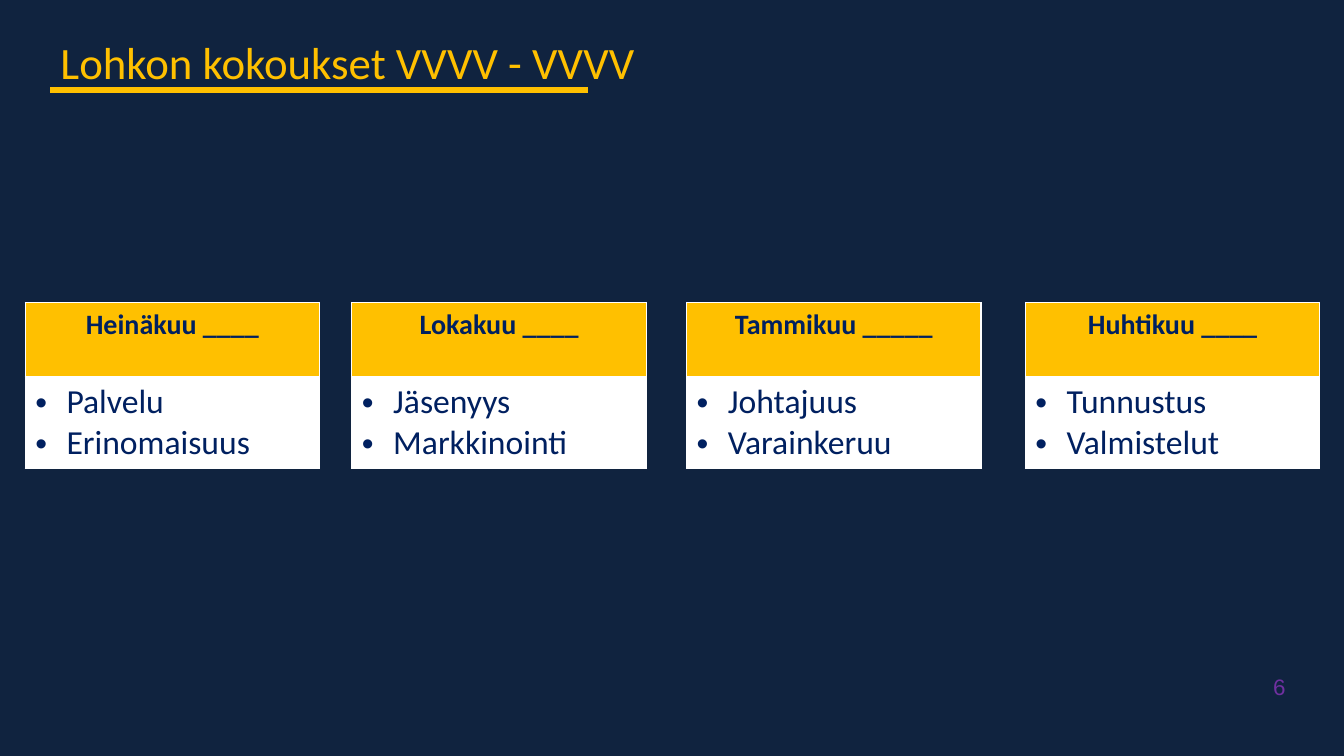
"""Builds the slide listing the four meetings of the section year."""
from dataclasses import dataclass

from lxml.etree import SubElement
from pptx import Presentation
from pptx.dml.color import RGBColor as RGB
from pptx.enum.shapes import MSO_CONNECTOR as CONN
from pptx.enum.text import MSO_ANCHOR as ANCHOR, MSO_AUTO_SIZE as AUTO, PP_ALIGN as ALIGN
from pptx.oxml import parse_xml
from pptx.oxml.ns import nsdecls, qn
from pptx.util import Inches, Pt


@dataclass(frozen=True)
class Theme:
    background: str = "10233F"
    gold: str = "FFC000"
    navy: str = "002060"
    white: str = "FFFFFF"
    purple: str = "7030A0"
    font: str = "Calibri"
    number_font: str = "Arial"
    title: int = 32
    header: int = 20
    body: int = 24
    number: int = 16
    rule: float = 4.5
    border: int = 1


class SlideBuilder:
    def __init__(self, prs, theme):
        self.theme = theme
        self.slide = prs.slides.add_slide(prs.slide_layouts[5])
        fill = self.slide.background.fill
        fill.solid()
        fill.fore_color.rgb = RGB.from_string(theme.background)

    def run(self, p, text, size, color, font=None, bold=False):
        r = p.add_run()
        r.text = text
        r.font.size = Pt(size)
        r.font.name = font or self.theme.font
        r.font.bold = bold
        r.font.color.rgb = RGB.from_string(color)

    def title(self, text, left, top, width, height):
        sp = self.slide.shapes.title
        sp.left, sp.top, sp.width, sp.height = map(Inches, (left, top, width, height))
        tf = sp.text_frame
        tf.word_wrap = True
        tf.auto_size = AUTO.NONE
        tf.vertical_anchor = ANCHOR.TOP
        p = tf.paragraphs[0]
        p.alignment = ALIGN.LEFT
        self.run(p, text, self.theme.title, self.theme.gold)

    def rule(self, x1, x2, y):
        line = self.slide.shapes.add_connector(
            CONN.STRAIGHT, Inches(x1), Inches(y), Inches(x2), Inches(y))
        line.line.color.rgb = RGB.from_string(self.theme.gold)
        line.line.width = Pt(self.theme.rule)
        SubElement(line._element.spPr, qn("a:effectLst"))

    def page_number(self, text, left, top, width, height):
        sp = self.slide.shapes.add_textbox(*map(Inches, (left, top, width, height)))
        tf = sp.text_frame
        tf.word_wrap = True
        tf.vertical_anchor = ANCHOR.MIDDLE
        tf.margin_left = tf.margin_right = 0
        p = tf.paragraphs[0]
        p.alignment = ALIGN.RIGHT
        self.run(p, text, self.theme.number, self.theme.purple, self.theme.number_font)

    def style_cell(self, cell, color):
        cell.fill.solid()
        cell.fill.fore_color.rgb = RGB.from_string(color)
        tc_pr = cell._tc.get_or_add_tcPr()
        for i, side in enumerate("LRTB"):
            tc_pr.insert(i, parse_xml(
                f'<a:ln{side} {nsdecls("a")} w="{Pt(self.theme.border)}"><a:solidFill>'
                f'<a:srgbClr val="{self.theme.white}"/></a:solidFill></a:ln{side}>'))

    def bullet(self, p, indent):
        p_pr = p._p.get_or_add_pPr()
        p_pr.set("marL", str(Inches(indent)))
        p_pr.set("indent", str(-Inches(indent)))
        SubElement(p_pr, qn("a:buFont")).set("typeface", "Arial")
        SubElement(p_pr, qn("a:buChar")).set("char", "•")

    def meeting(self, month, topics, left, top, width, heights):
        theme = self.theme
        frame = self.slide.shapes.add_table(
            2, 1, *map(Inches, (left, top, width, sum(heights))))
        table = frame.table
        for row, height in zip(table.rows, heights):
            row.height = Inches(height)
        header, body = table.cell(0, 0), table.cell(1, 0)
        self.style_cell(header, theme.gold)
        self.style_cell(body, theme.white)
        p = header.text_frame.paragraphs[0]
        p.alignment = ALIGN.CENTER
        self.run(p, month, theme.header, theme.navy, bold=True)
        tf = body.text_frame
        for i, topic in enumerate(topics):
            p = tf.add_paragraph() if i else tf.paragraphs[0]
            self.bullet(p, 0.31)
            self.run(p, topic, theme.body, theme.navy)


MEETINGS = [
    (0.25, "Heinäkuu ____", ("Palvelu", "Erinomaisuus")),
    (3.49, "Lokakuu ____", ("Jäsenyys", "Markkinointi")),
    (6.81, "Tammikuu _____", ("Johtajuus", "Varainkeruu")),
    (10.17, "Huhtikuu ____", ("Tunnustus", "Valmistelut")),
]


def main():
    prs = Presentation()
    prs.slide_width, prs.slide_height = Inches(13.33), Inches(7.5)
    s = SlideBuilder(prs, Theme())
    s.page_number("6", 12.14, 6.63, 0.61, 0.37)
    s.title("Lohkon kokoukset VVVV - VVVV", 0.5, 0.29, 7.42, 0.64)
    s.rule(0.5, 5.83, 0.89)
    for left, month, topics in MEETINGS:
        s.meeting(month, topics, left, 3, 2.92, (0.74, 0.91))
    prs.save("out.pptx")


if __name__ == "__main__":
    main()
